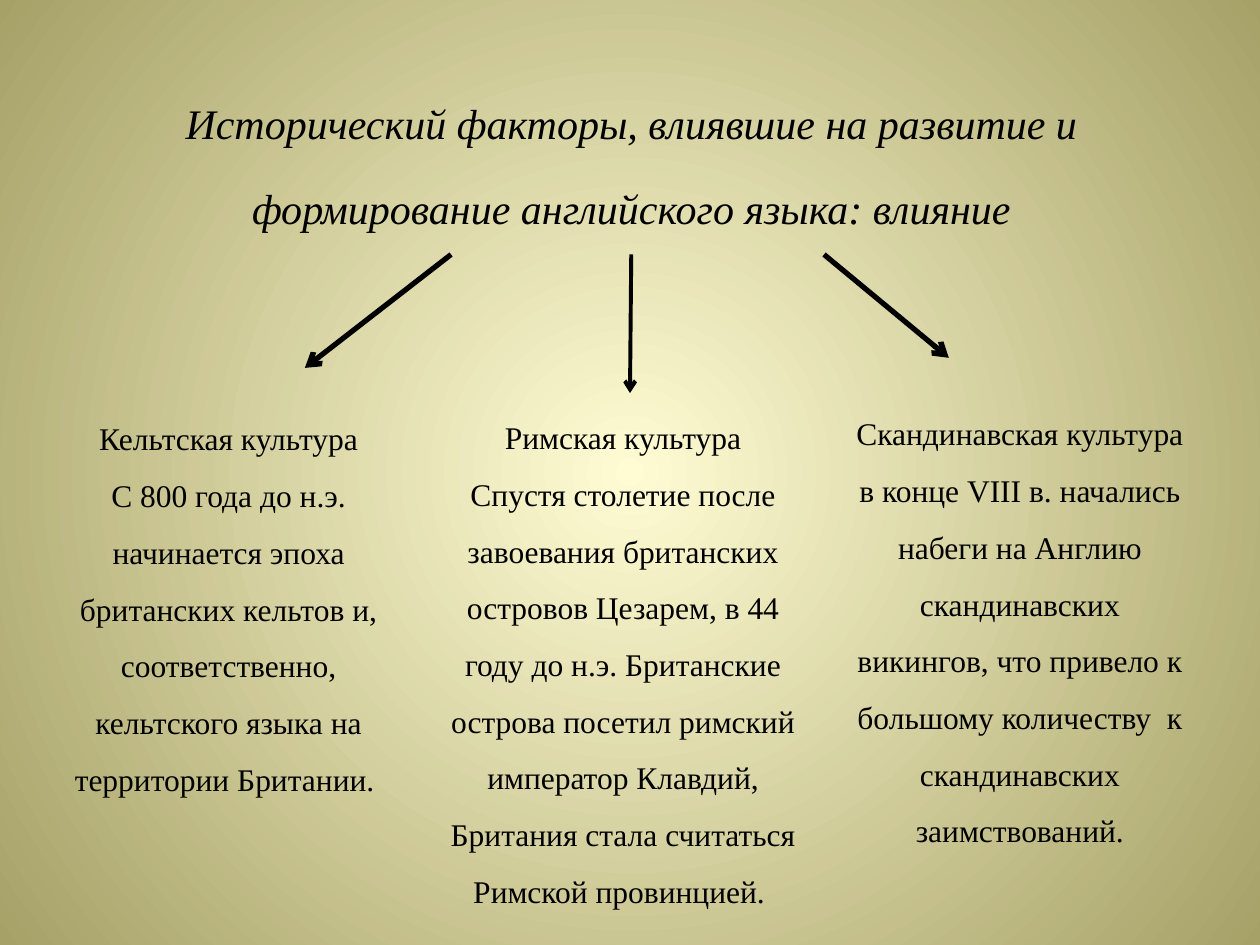
from lxml.etree import SubElement
from pptx import Presentation
from pptx.dml.color import RGBColor
from pptx.enum.shapes import MSO_CONNECTOR
from pptx.enum.text import MSO_ANCHOR, MSO_AUTO_SIZE, PP_ALIGN
from pptx.oxml.ns import qn
from pptx.util import Inches, Pt


def color(code):
    return RGBColor.from_string(code)


def write(par, text, size, gap, italic=False):
    """Fill one centred paragraph with a run."""
    par.alignment = PP_ALIGN.CENTER
    par.line_spacing = gap
    run = par.add_run()
    run.text = text
    run.font.name = "Times New Roman"
    run.font.size = Pt(size)
    run.font.italic = italic
    run.font.color.rgb = color("000000")


deck = Presentation()
deck.slide_width, deck.slide_height = Inches(10), Inches(7.5)
slide = deck.slides.add_slide(deck.slide_layouts[5])

# Background: radial gradient from the centre
fill = slide.background.fill
fill.gradient()
for stop, code in zip(fill.gradient_stops, ("FFFCD4", "A6A167")):
    stop.color.rgb = color(code)
grad = next(slide.element.iter(qn("a:gradFill")))
grad.remove(grad.find(qn("a:lin")))
path = SubElement(grad, qn("a:path"), path="circle")
SubElement(path, qn("a:fillToRect"), dict.fromkeys("ltrb", "50000"))

# Title
title = slide.shapes.title
title.left, title.top = Inches(0.51), Inches(0.44)
title.width, title.height = Inches(9), Inches(1.57)
frame = title.text_frame
frame.auto_size = MSO_AUTO_SIZE.NONE
frame.vertical_anchor = MSO_ANCHOR.TOP
frame.paragraphs[0].space_before = Pt(5)
write(frame.paragraphs[0],
      "Исторический факторы, влиявшие на развитие и формирование "
      "английского языка: влияние", 24, 1.7, True)

# Arrows from the title to the columns
arrows = [
    (3.58, 2.42, 2.92, 3),
    (6.54, 7.53, 2.84, 3),
    (5.01, 5, 3.12, 2.25),
]
for start, end, foot, width in arrows:
    arrow = slide.shapes.add_connector(
        MSO_CONNECTOR.STRAIGHT, Inches(start), Inches(2.02),
        Inches(end), Inches(foot))
    arrow.line.color.rgb = color("000000")
    arrow.line.width = Pt(width)
    SubElement(arrow.line._get_or_add_ln(), qn("a:tailEnd"), type="arrow")
    SubElement(arrow.element.spPr, qn("a:effectLst"))

# Columns: place, heading, text
columns = [
    ((0.28, 3.13, 3.07, 3.28), "Кельтская культура",
     "С 800 года до н.э. начинается эпоха британских кельтов и, "
     "соответственно, кельтского языка на территории Британии. "),
    ((3.35, 3.12, 3.19, 4.19), "Римская культура",
     "Спустя столетие после завоевания британских островов Цезарем, "
     "в 44 году до н.э. Британские острова посетил римский император "
     "Клавдий, Британия стала считаться Римской провинцией. "),
    ((6.68, 3.09, 2.83, 4.14), "Скандинавская культура",
     "в конце VIII в. начались набеги на Англию скандинавских викингов, "
     "что привело к большому количеству  к скандинавских заимствований."),
]
for place, head, text in columns:
    frame = slide.shapes.add_textbox(*map(Inches, place)).text_frame
    frame.word_wrap = True
    frame.auto_size = MSO_AUTO_SIZE.SHAPE_TO_FIT_TEXT
    write(frame.paragraphs[0], head, 18, 1.5)
    write(frame.add_paragraph(), text, 18, 1.5)

deck.save("out.pptx")
